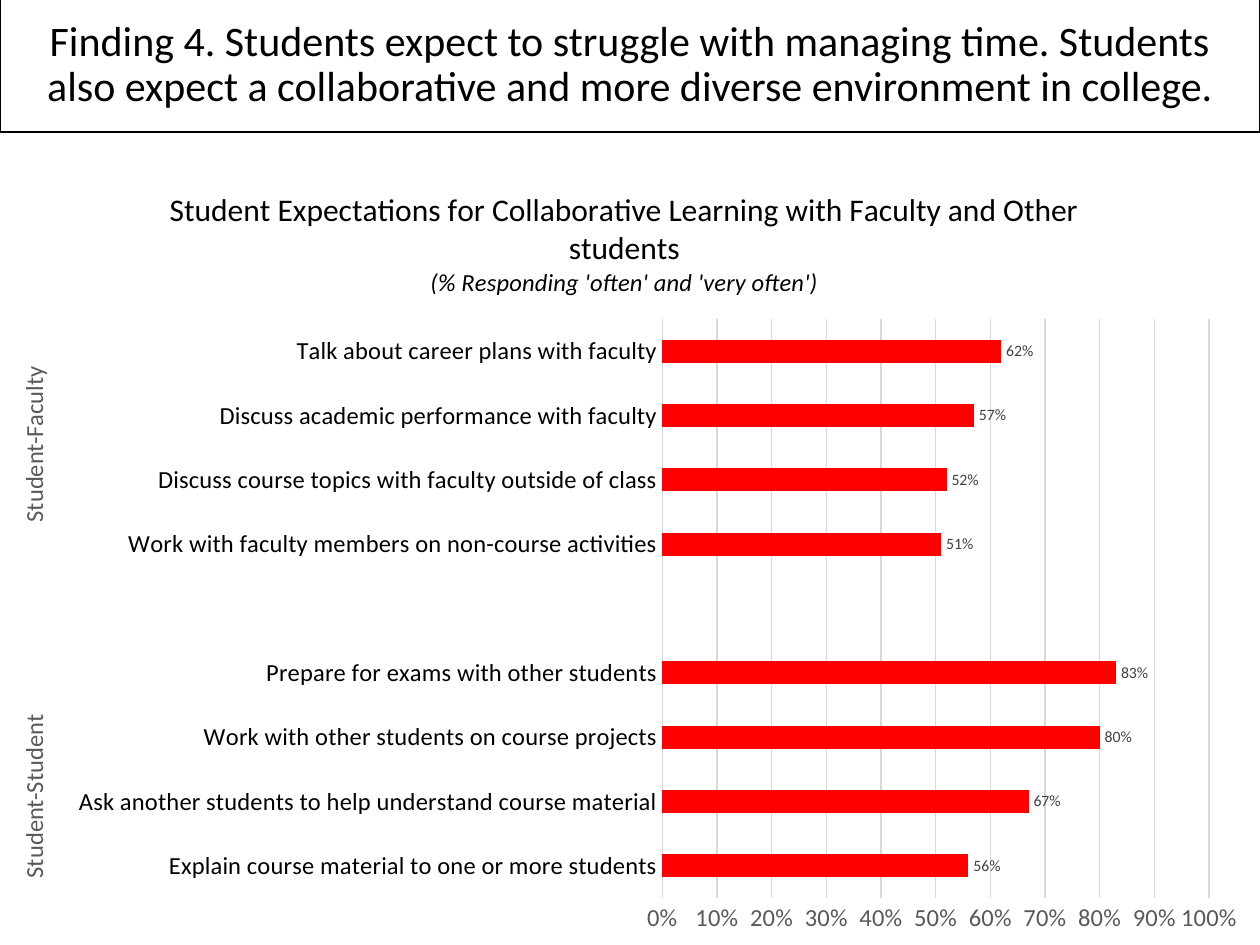
from lxml import etree
from pptx import Presentation
from pptx.chart.data import CategoryChartData
from pptx.dml.color import RGBColor
from pptx.enum.chart import XL_CHART_TYPE, XL_LABEL_POSITION, XL_TICK_MARK
from pptx.enum.text import MSO_ANCHOR, MSO_AUTO_SIZE, PP_ALIGN
from pptx.oxml import parse_xml
from pptx.util import Cm, Pt

BAR = XL_CHART_TYPE.BAR_CLUSTERED
OUT_END = XL_LABEL_POSITION.OUTSIDE_END
NO_TICK = XL_TICK_MARK.NONE
MIDDLE = MSO_ANCHOR.MIDDLE
NO_FIT = MSO_AUTO_SIZE.NONE
CENTER = PP_ALIGN.CENTER

BLACK = RGBColor(0x00, 0x00, 0x00)
RED = RGBColor(0xFF, 0x00, 0x00)
DARK = RGBColor(0x40, 0x40, 0x40)
GRAY = RGBColor(0x59, 0x59, 0x59)
PALE = RGBColor(0xD9, 0xD9, 0xD9)
FACE = "Calibri"
CHART_NS = "http://schemas.openxmlformats.org/drawingml/2006/chart"

HEAD = ("Finding 4. Students expect to struggle with managing time. Students "
        "also expect a collaborative and more diverse environment in college.")
NAME = ("Student Expectations for Collaborative Learning with Faculty and "
        "Other students")
NOTE = "(% Responding 'often' and 'very often')"
ROWS = [
    ("Explain course material to one or more students", 0.56),
    ("Ask another students to help understand course material", 0.67),
    ("Work with other students on course projects", 0.80),
    ("Prepare for exams with other students", 0.83),
    ("", None),
    ("Work with faculty members on non-course activities", 0.51),
    ("Discuss course topics with faculty outside of class", 0.52),
    ("Discuss academic performance with faculty", 0.57),
    ("Talk about career plans with faculty", 0.62),
]
# Group name and the height of its middle, as a share of the chart box
GROUPS = [("Student-Faculty", 0.36), ("Student-Student", 0.81)]


def set_font(font, size, color):
    font.name = FACE
    font.size = Pt(size)
    font.bold = False
    font.color.rgb = color


def add_run(para, text, size, color):
    run = para.add_run()
    run.text = text
    set_font(run.font, size, color)
    return run


def add_head(slide, left, top, width, height):
    title = slide.shapes.title
    title.left, title.top = Cm(left), Cm(top)
    title.width, title.height = Cm(width), Cm(height)
    title.line.color.rgb = BLACK
    title.line.width = Pt(0.75)
    frame = title.text_frame
    frame.auto_size = NO_FIT
    frame.vertical_anchor = MIDDLE
    para = frame.paragraphs[0]
    para.alignment = CENTER
    para.line_spacing = 0.9
    add_run(para, HEAD, 24, BLACK)


def set_plot(chart, x, y, w, h):
    """Fix the inner plot area, in shares of the chart box."""
    area = chart.plots[0]._element.getparent()
    for old in area.findall(f"{{{CHART_NS}}}layout"):
        area.remove(old)
    layout = parse_xml(f'<c:layout xmlns:c="{CHART_NS}"/>')
    manual = etree.SubElement(layout, f"{{{CHART_NS}}}manualLayout")
    parts = [("layoutTarget", "inner"), ("xMode", "edge"), ("yMode", "edge"),
             ("x", x), ("y", y), ("w", w), ("h", h)]
    for tag, val in parts:
        etree.SubElement(manual, f"{{{CHART_NS}}}{tag}", val=str(val))
    area.insert(0, layout)


def add_bars(slide, left, top, width, height):
    data = CategoryChartData(number_format="0%")
    data.categories = [label for label, _ in ROWS]
    data.add_series("Series 1", [share for _, share in ROWS])
    chart = slide.shapes.add_chart(
        BAR, Cm(left), Cm(top), Cm(width), Cm(height), data).chart
    set_font(chart.font, 10, BLACK)
    chart.has_legend = False
    set_plot(chart, 0.53, 0.2, 0.43, 0.74)

    # Chart title
    chart.has_title = True
    frame = chart.chart_title.text_frame
    add_run(frame.paragraphs[0], NAME, 18, BLACK)
    add_run(frame.add_paragraph(), NOTE, 14, BLACK).font.italic = True

    # Bars and their labels
    plot = chart.plots[0]
    plot.gap_width = 182
    plot.vary_by_categories = False
    fill = plot.series[0].format.fill
    fill.solid()
    fill.fore_color.rgb = RED
    plot.has_data_labels = True
    labels = plot.data_labels
    labels.show_value = True
    labels.position = OUT_END
    labels.number_format = "0%"
    labels.number_format_is_linked = False
    set_font(labels.font, 9, DARK)

    # Axes
    cats, vals = chart.category_axis, chart.value_axis
    for axis, color in ((cats, BLACK), (vals, GRAY)):
        axis.major_tick_mark = axis.minor_tick_mark = NO_TICK
        set_font(axis.tick_labels.font, 14, color)
    vals.minimum_scale, vals.maximum_scale = 0, 1
    vals.major_unit = 0.1
    vals.tick_labels.number_format = "0%"
    vals.tick_labels.number_format_is_linked = False
    vals.format.line.fill.background()
    vals.has_major_gridlines = True
    for line in (cats.format.line, vals.major_gridlines.format.line):
        line.color.rgb = PALE
        line.width = Pt(0.75)


def add_groups(slide, left, top, height):
    """Name the two groups of bars along the left edge, read upwards."""
    wide, tall = 4.5, 0.8
    for name, share in GROUPS:
        mid = top + share * height
        box = slide.shapes.add_textbox(
            Cm(left + 0.9 - wide / 2), Cm(mid - tall / 2), Cm(wide), Cm(tall))
        box.rotation = -90
        frame = box.text_frame
        frame.word_wrap = True
        frame.vertical_anchor = MIDDLE
        para = frame.paragraphs[0]
        para.alignment = CENTER
        add_run(para, name, 14, GRAY)


def main():
    prs = Presentation()
    prs.slide_width, prs.slide_height = Cm(25.4), Cm(19.05)
    slide = prs.slides.add_slide(prs.slide_layouts[5])
    left, top, width, height = -0.23, 3.28, 25.63, 15.77
    add_bars(slide, left, top, width, height)
    add_groups(slide, left, top, height)
    add_head(slide, 0, -0.03, 25.4, 2.69)
    prs.save("out.pptx")


if __name__ == "__main__":
    main()
